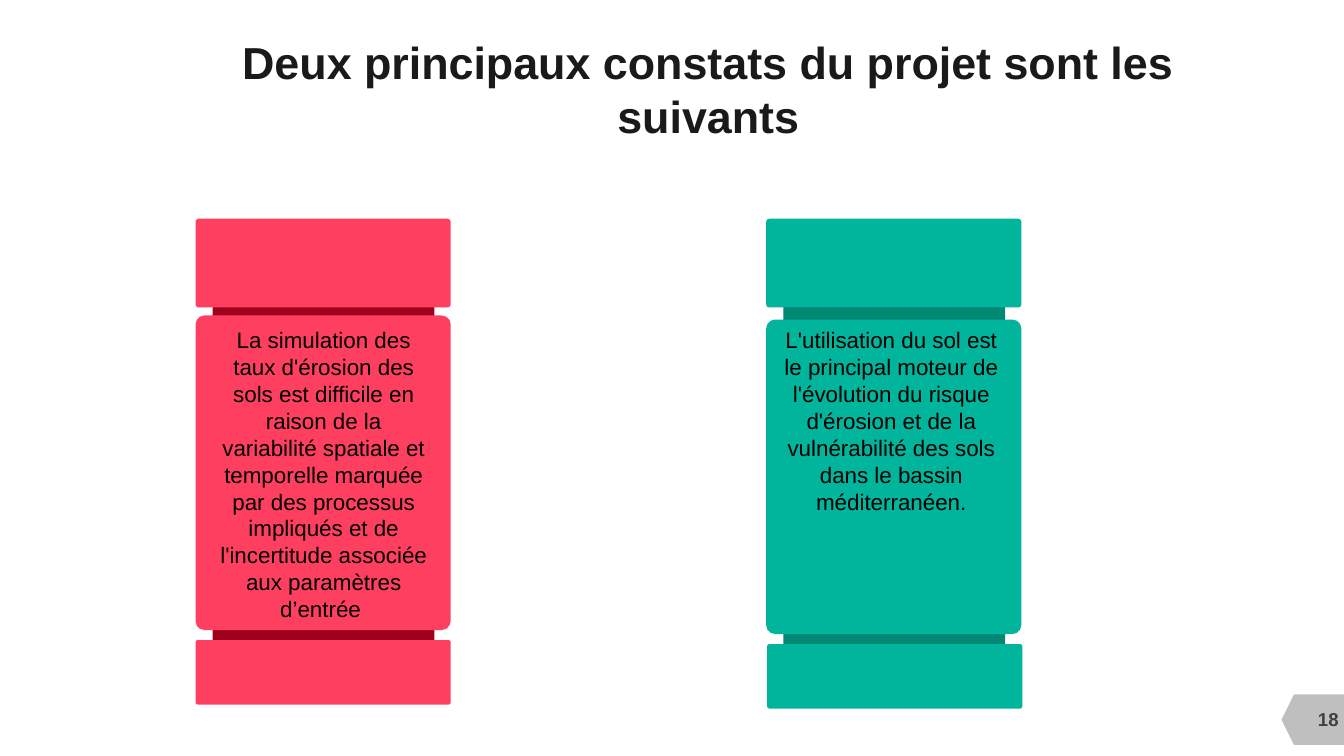
from pptx import Presentation
from pptx.dml.color import RGBColor
from pptx.enum.shapes import MSO_SHAPE
from pptx.enum.text import MSO_ANCHOR, MSO_AUTO_SIZE, PP_ALIGN
from pptx.util import Inches, Pt

FONT = "Arial"


def color(hex_string):
    return RGBColor.from_string(hex_string)


def add_block(slide, kind, left, top, width, height, fill):
    shape = slide.shapes.add_shape(
        kind, Inches(left), Inches(top), Inches(width), Inches(height))
    shape.shadow.inherit = False
    shape.fill.solid()
    shape.fill.fore_color.rgb = color(fill)
    shape.line.fill.background()
    if kind == MSO_SHAPE.ROUNDED_RECTANGLE:
        shape.adjustments[0] = 0.035
    return shape


def add_text(slide, left, top, width, height, text, size, ink, bold=False):
    box = slide.shapes.add_textbox(
        Inches(left), Inches(top), Inches(width), Inches(height))
    frame = box.text_frame
    frame.word_wrap = True
    paragraph = frame.paragraphs[0]
    paragraph.text = text
    paragraph.alignment = PP_ALIGN.CENTER
    paragraph.font.name = FONT
    paragraph.font.size = Pt(size)
    paragraph.font.bold = bold
    paragraph.font.color.rgb = color(ink)
    return frame


def add_title(slide, left, top, width, height, text):
    frame = add_text(slide, left, top, width, height, text, 32, "1A1A1A", True)
    frame.vertical_anchor = MSO_ANCHOR.MIDDLE
    frame.margin_left = frame.margin_right = 0
    frame.margin_top = frame.margin_bottom = 0


def add_pillar(slide, left, top, width, fill, core_fill, core_top, drop,
               foot_shift, text_left, text_height, text):
    rounded = MSO_SHAPE.ROUNDED_RECTANGLE
    # Dark core behind the blocks
    add_block(slide, MSO_SHAPE.RECTANGLE, left + 0.17, top + core_top,
              width - 0.33, 3.93, core_fill)
    # Body, head and foot
    add_block(slide, rounded, left, top + 0.96 + drop, width, 3.12, fill)
    add_block(slide, rounded, left, top, width, 0.88, fill)
    add_block(slide, rounded, left + foot_shift, top + 4.18 + drop,
              width, 0.64, fill)
    # Finding
    frame = add_text(slide, left + text_left, top + 1.02, 2.32, text_height,
                     text, 16, "000000")
    frame.auto_size = MSO_AUTO_SIZE.SHAPE_TO_FIT_TEXT
    frame.paragraphs[0].space_before = Pt(5.3)


def add_page_marker(slide, left, top, number):
    marker = add_block(slide, MSO_SHAPE.FLOWCHART_OFFPAGE_CONNECTOR,
                       left, top, 0.5, 0.62, "BFBFBF")
    marker.rotation = 90
    frame = add_text(slide, left + 0.07, top + 0.1, 0.67, 0.4, number,
                     13.3, "404040", True)
    frame.vertical_anchor = MSO_ANCHOR.MIDDLE


def main():
    presentation = Presentation()
    presentation.slide_width = Inches(13.33)
    presentation.slide_height = Inches(7.5)
    slide = presentation.slides.add_slide(presentation.slide_layouts[6])

    add_page_marker(slide, 12.77, 6.83, "18")
    add_title(slide, 1.77, 0.42, 10.51, 0.91,
              "Deux principaux constats du projet sont les suivants")
    add_pillar(slide, 1.94, 2.17, 2.53, "FF3F5F", "9F001B",
               core_top=0.29, drop=0, foot_shift=0,
               text_left=0.11, text_height=3.06,
               text="La simulation des taux d'érosion des sols est difficile "
                    "en raison de la variabilité spatiale et temporelle "
                    "marquée par des processus impliqués et de l'incertitude "
                    "associée aux paramètres d’entrée ")
    add_pillar(slide, 7.6, 2.17, 2.53, "01B59C", "018875",
               core_top=0.87, drop=0.04, foot_shift=0.01,
               text_left=0.08, text_height=1.99,
               text="L'utilisation du sol est le principal moteur de "
                    "l'évolution du risque d'érosion et de la vulnérabilité "
                    "des sols dans le bassin méditerranéen.")
    presentation.save("out.pptx")


if __name__ == "__main__":
    main()
